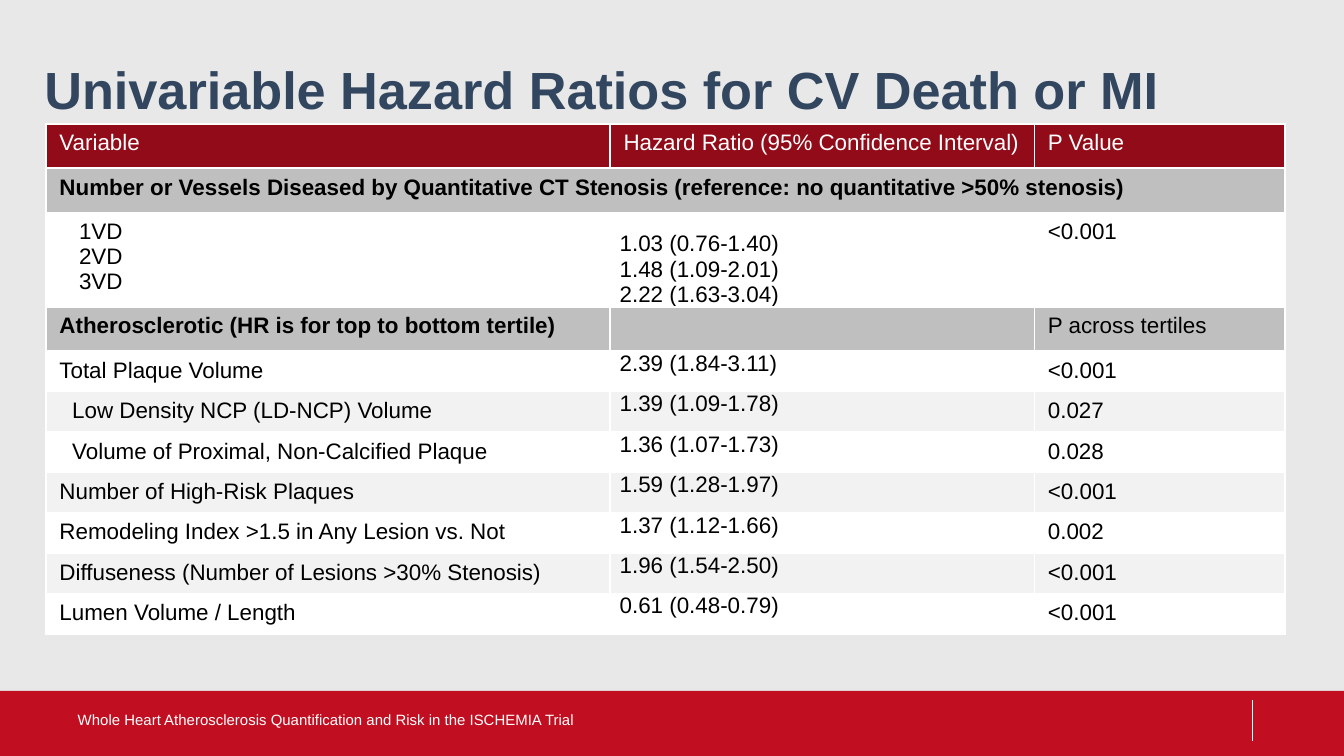
from lxml import etree
from pptx import Presentation
from pptx.dml.color import RGBColor
from pptx.enum.shapes import MSO_CONNECTOR, MSO_SHAPE
from pptx.enum.text import MSO_ANCHOR
from pptx.oxml.ns import qn
from pptx.util import Cm, Pt

RECTANGLE = MSO_SHAPE.RECTANGLE
STRAIGHT = MSO_CONNECTOR.STRAIGHT
TOP, MIDDLE, BOTTOM = MSO_ANCHOR.TOP, MSO_ANCHOR.MIDDLE, MSO_ANCHOR.BOTTOM

TITLE = "Univariable Hazard Ratios for CV Death or MI"
FOOTER = "Whole Heart Atherosclerosis Quantification and Risk in the ISCHEMIA Trial"

ROWS = [
    ("header", 0, "Variable", "Hazard Ratio (95% Confidence Interval)", "P Value"),
    ("section", 0, "Number or Vessels Diseased by Quantitative CT Stenosis "
                   "(reference: no quantitative >50% stenosis)", "", ""),
    ("vessels", 0.37, "1VD\n2VD\n3VD",
     "1.03 (0.76-1.40)\n1.48 (1.09-2.01)\n2.22 (1.63-3.04)", "<0.001"),
    ("section", 0, "Atherosclerotic (HR is for top to bottom tertile)", "",
     "P across tertiles"),
    ("plain", 0, "Total Plaque Volume", "2.39 (1.84-3.11)", "<0.001"),
    ("banded", 0.24, "Low Density NCP (LD-NCP) Volume", "1.39 (1.09-1.78)", "0.027"),
    ("plain", 0.24, "Volume of Proximal, Non-Calcified Plaque", "1.36 (1.07-1.73)", "0.028"),
    ("banded", 0, "Number of High-Risk Plaques", "1.59 (1.28-1.97)", "<0.001"),
    ("plain", 0, "Remodeling Index >1.5 in Any Lesion vs. Not", "1.37 (1.12-1.66)", "0.002"),
    ("banded", 0, "Diffuseness (Number of Lesions >30% Stenosis)", "1.96 (1.54-2.50)", "<0.001"),
    ("plain", 0, "Lumen Volume / Length", "0.61 (0.48-0.79)", "<0.001"),
]
COLUMN_WIDTHS = (10.66, 8.02, 4.74)
ROW_HEIGHTS = {"header": 0.84, "section": 0.84, "vessels": 1.7, "plain": 0.73, "banded": 0.73}
MERGED_ROW = 1

THEME = {
    "font": "Arial",
    "background": "E8E8E8",
    "footer": "C10E20",
    "title": "32475F",
    "white": "FFFFFF",
    "black": "000000",
    "fills": {"header": "910B18", "section": "BFBFBF", "vessels": "FFFFFF",
              "plain": "FFFFFF", "banded": "F2F2F2"},
    "title_size": 28,
    "table_size": 12,
    "footer_size": 8,
}


def color(value):
    return RGBColor.from_string(value)


def add_run(paragraph, text, size, text_color, bold=False):
    run = paragraph.add_run()
    run.text = text
    run.font.name = THEME["font"]
    run.font.size = Pt(size)
    run.font.bold = bold
    run.font.color.rgb = color(text_color)


def add_text_box(slide, place, anchor):
    frame = slide.shapes.add_textbox(*(Cm(length) for length in place)).text_frame
    frame.word_wrap = True
    frame.vertical_anchor = anchor
    return frame


def add_borders(cell):
    properties = cell._tc.get_or_add_tcPr()
    for side in ("a:lnL", "a:lnR", "a:lnT", "a:lnB"):
        line = etree.SubElement(properties, qn(side), w=str(Pt(1)))
        fill = etree.SubElement(line, qn("a:solidFill"))
        etree.SubElement(fill, qn("a:srgbClr"), val=THEME["white"])


def fill_cell(cell, kind, column, text, indent):
    add_borders(cell)
    cell.fill.solid()
    cell.fill.fore_color.rgb = color(THEME["fills"][kind])
    if column == 1 and kind not in ("header", "section"):
        cell.margin_left = cell.margin_right = Cm(0.18)
        cell.margin_top = cell.margin_bottom = Cm(0)
        cell.vertical_anchor = BOTTOM if kind == "vessels" else TOP
    text_color = THEME["white"] if kind == "header" else THEME["black"]
    bold = kind == "section" and column == 0
    frame = cell.text_frame
    for number, line in enumerate(text.split("\n")):
        paragraph = frame.add_paragraph() if number else frame.paragraphs[0]
        if column == 0 and indent:
            paragraph._p.get_or_add_pPr().set("marL", str(Cm(indent)))
        if line:
            add_run(paragraph, line, THEME["table_size"], text_color, bold)
        else:
            etree.SubElement(paragraph._p, qn("a:endParaRPr"),
                             sz=str(THEME["table_size"] * 100))


def add_hazard_table(slide):
    heights = [ROW_HEIGHTS[row[0]] for row in ROWS]
    table = slide.shapes.add_table(
        len(ROWS), len(COLUMN_WIDTHS), Cm(0.87), Cm(2.34),
        Cm(sum(COLUMN_WIDTHS)), Cm(sum(heights))).table
    table.first_row = False
    table.horz_banding = False
    for column, width in zip(table.columns, COLUMN_WIDTHS):
        column.width = Cm(width)
    for row_index, (kind, indent, *texts) in enumerate(ROWS):
        table.rows[row_index].height = Cm(heights[row_index])
        for column, text in enumerate(texts):
            fill_cell(table.cell(row_index, column), kind, column, text, indent)
    table.cell(MERGED_ROW, 0).merge(table.cell(MERGED_ROW, len(COLUMN_WIDTHS) - 1))


def add_footer(slide):
    band = slide.shapes.add_shape(RECTANGLE, Cm(0), Cm(13.06), Cm(25.4), Cm(1.23))
    band.shadow.inherit = False
    band.fill.solid()
    band.fill.fore_color.rgb = color(THEME["footer"])
    band.line.fill.background()
    divider = slide.shapes.add_connector(STRAIGHT, Cm(23.67), Cm(13.23), Cm(23.67), Cm(14))
    divider.line.color.rgb = color(THEME["white"])
    divider.line.width = Pt(0.5)
    etree.SubElement(divider._element.spPr, qn("a:effectLst"))
    frame = add_text_box(slide, (1.22, 13.23, 15.29, 0.76), MIDDLE)
    add_run(frame.paragraphs[0], FOOTER, THEME["footer_size"], THEME["white"])


def add_title(slide):
    frame = add_text_box(slide, (0.79, 0.81, 24.26, 1.07), TOP)
    frame.margin_left = frame.margin_right = frame.margin_bottom = Cm(0.05)
    frame.margin_top = Cm(0.15)
    paragraph = frame.paragraphs[0]
    paragraph.line_spacing = 1.1
    add_run(paragraph, TITLE, THEME["title_size"], THEME["title"], True)


def main():
    presentation = Presentation()
    presentation.slide_width = Cm(25.4)
    presentation.slide_height = Cm(14.29)
    slide = presentation.slides.add_slide(presentation.slide_layouts[6])
    slide.background.fill.solid()
    slide.background.fill.fore_color.rgb = color(THEME["background"])
    add_title(slide)
    add_hazard_table(slide)
    add_footer(slide)
    presentation.save("out.pptx")


if __name__ == "__main__":
    main()
